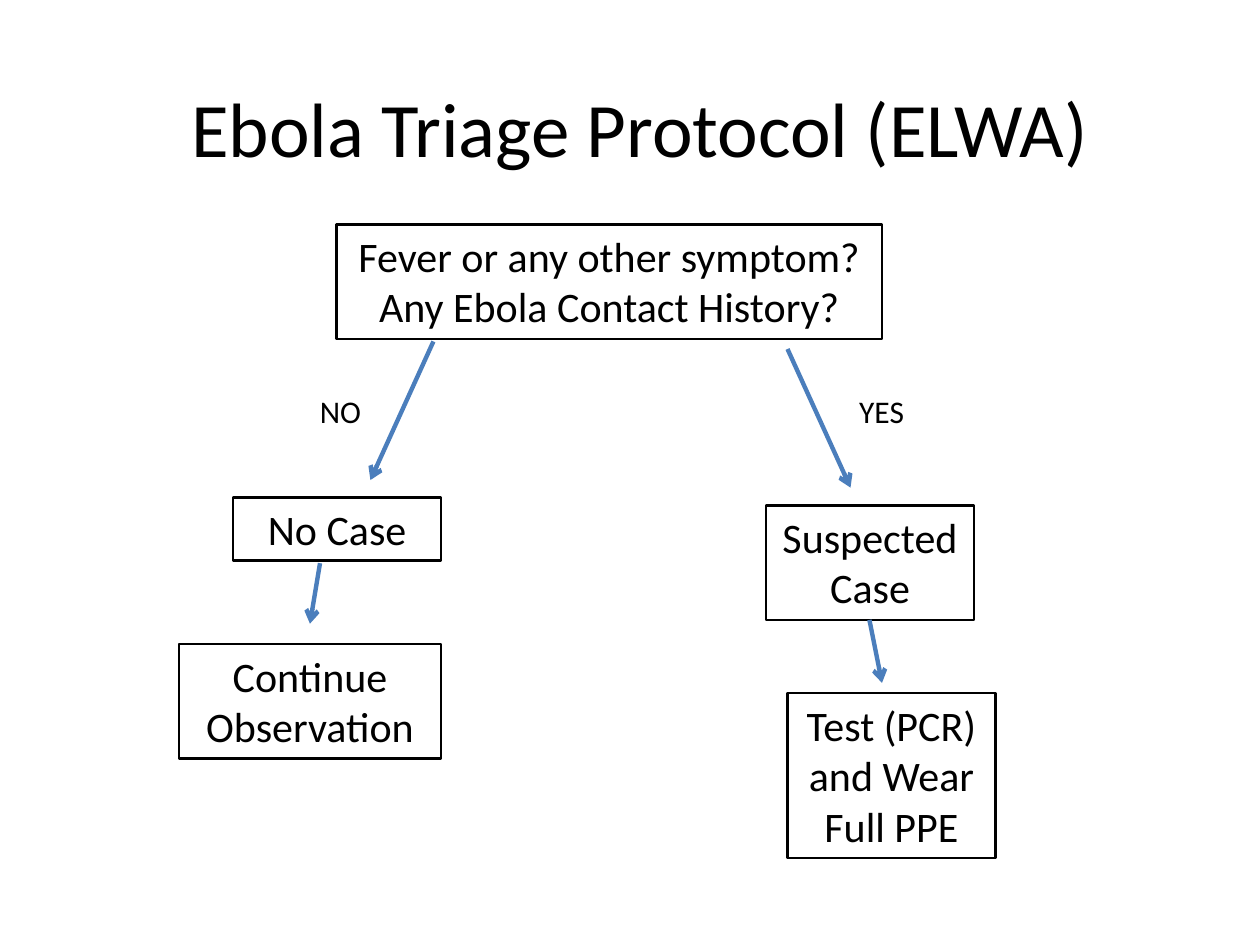
import pptx
import pptx.dml.color
import pptx.enum.shapes
import pptx.enum.text
import pptx.oxml.ns
import pptx.util
from lxml import etree

Inches = pptx.util.Inches
Pt = pptx.util.Pt
RGBColor = pptx.dml.color.RGBColor
Align = pptx.enum.text.PP_ALIGN
Anchor = pptx.enum.text.MSO_ANCHOR
Fit = pptx.enum.text.MSO_AUTO_SIZE
qn = pptx.oxml.ns.qn

BLACK = RGBColor(0x00, 0x00, 0x00)
BLUE = RGBColor(0x4B, 0x7E, 0xBC)


class Chart:
    font = "Calibri"

    def __init__(self, slide):
        self.slide = slide

    def words(self, shape, lines, size, align=Align.CENTER):
        """Add one paragraph per line and return the text frame."""
        frame = shape.text_frame
        for i, line in enumerate(lines):
            para = frame.paragraphs[0] if i == 0 else frame.add_paragraph()
            para.alignment = align
            run = para.add_run()
            run.text = line
            run.font.name = self.font
            run.font.size = Pt(size)
            run.font.color.rgb = BLACK
        return frame

    def title(self, text, *place):
        box = self.slide.shapes.add_textbox(*map(Inches, place))
        frame = self.words(box, [text], 44)
        frame.word_wrap = True
        frame.vertical_anchor = Anchor.MIDDLE

    def label(self, text, *place):
        box = self.slide.shapes.add_textbox(*map(Inches, place))
        frame = self.words(box, [text], 18, Align.LEFT)
        frame.word_wrap = False
        frame.auto_size = Fit.SHAPE_TO_FIT_TEXT

    def step(self, lines, *place):
        kind = pptx.enum.shapes.MSO_SHAPE.RECTANGLE
        box = self.slide.shapes.add_shape(kind, *map(Inches, place))
        box.shadow.inherit = False
        box.fill.background()
        box.line.color.rgb = BLACK
        box.line.width = Pt(1.5)
        frame = self.words(box, lines, 24)
        frame.word_wrap = True
        frame.vertical_anchor = Anchor.TOP
        frame.auto_size = Fit.SHAPE_TO_FIT_TEXT

    def arrow(self, *ends):
        kind = pptx.enum.shapes.MSO_CONNECTOR.STRAIGHT
        link = self.slide.shapes.add_connector(kind, *map(Inches, ends))
        link.line.color.rgb = BLUE
        link.line.width = Pt(2.5)
        props = link.element.spPr
        etree.SubElement(props.find(qn("a:ln")), qn("a:tailEnd"), type="arrow")
        etree.SubElement(props, qn("a:effectLst"))


def main():
    deck = pptx.Presentation()
    deck.slide_width, deck.slide_height = Inches(10), Inches(7.5)
    chart = Chart(deck.slides.add_slide(deck.slide_layouts[6]))

    chart.title("Ebola Triage Protocol (ELWA)", 0.83, 0.17, 8.5, 1.67)
    chart.step(["Fever or any other symptom?", "Any Ebola Contact History?"],
               2.67, 1.78, 4.33, 0.91)

    chart.arrow(3.44, 2.71, 2.94, 3.81)
    chart.label("NO", 2.44, 3.06, 0.53, 0.4)
    chart.step(["No Case"], 1.85, 3.95, 1.65, 0.5)
    chart.arrow(2.54, 4.47, 2.46, 4.95)
    chart.step(["Continue Observation"], 1.42, 5.11, 2.08, 0.91)

    chart.arrow(6.25, 2.77, 6.75, 3.87)
    chart.label("YES", 6.72, 3.06, 0.56, 0.4)
    chart.step(["Suspected Case"], 6.08, 4.01, 1.65, 0.91)
    chart.arrow(6.9, 4.92, 7, 5.42)
    chart.step(["Test (PCR) and Wear Full PPE"], 6.25, 5.5, 1.65, 1.31)

    deck.save("out.pptx")


if __name__ == "__main__":
    main()
